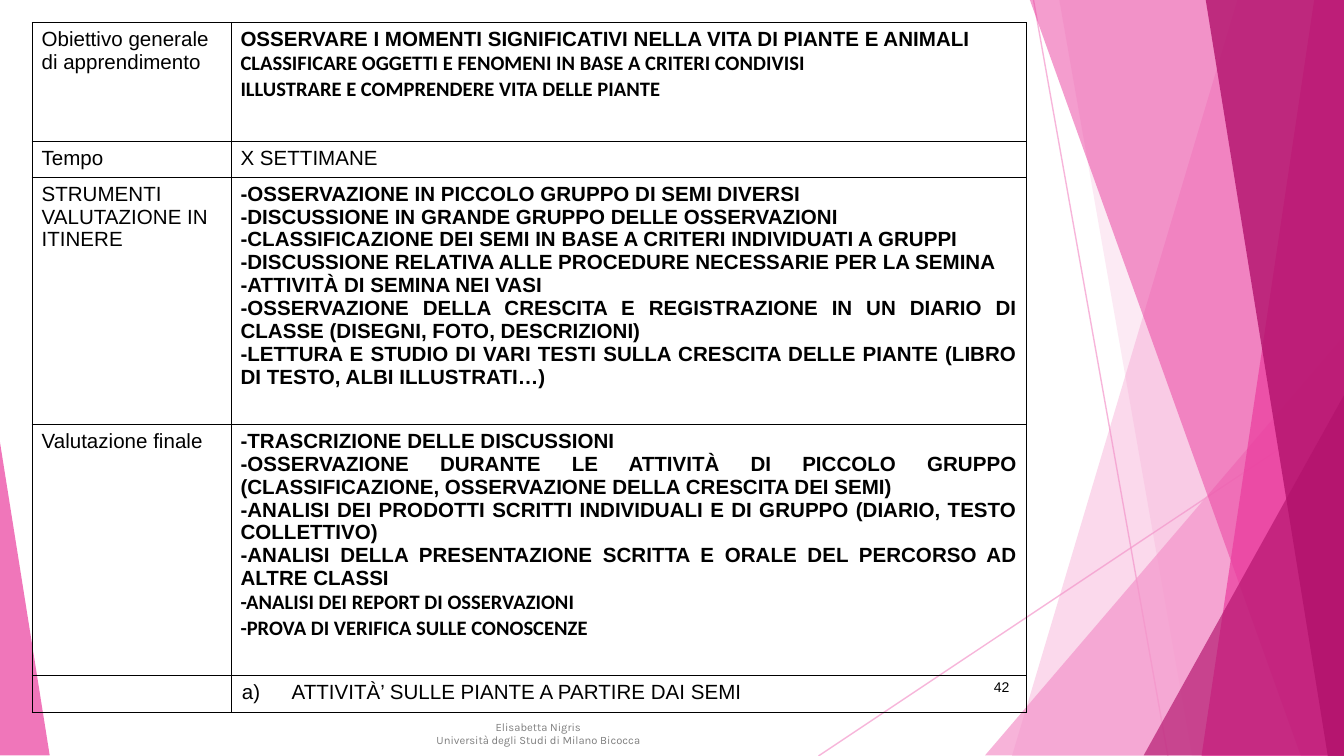
from lxml.etree import SubElement
from pptx import Presentation
from pptx.dml.color import RGBColor as RGB
from pptx.enum.shapes import MSO_CONNECTOR as CONNECTOR, MSO_SHAPE as SHAPE
from pptx.enum.text import MSO_ANCHOR as ANCHOR, PP_ALIGN as ALIGN
from pptx.oxml.ns import qn
from pptx.util import Inches, Pt

THEME = {
    "ink": "000000", "grey": "7F7F7F",
    "light": "F496CB", "pink": "EA3C9E", "deep": "B2126C",
    "arial": "Arial", "calibri": "Calibri", "karla": "Karla",
    "body": 11, "number": 7.5, "credit": 6, "rule": 0.75,
}
WIDTH = 10
HEIGHT = WIDTH * 9 / 16
BLEED = -0.01

RAYS = [((7.69, 0), (8.69, HEIGHT)), ((WIDTH, 3.02), (6.09, HEIGHT))]
FACETS = [
    {"edge": (9.21, 7.53), "tint": "light", "alpha": 36},
    {"edge": (7.88, 8.87), "tint": "light", "alpha": 20},
    {"box": (7.33, 2.5, 2.67, 3.12), "apex": 1, "tint": "light", "alpha": 72},
    {"edge": (7.66, 9.68), "tint": "pink", "alpha": 50},
    {"edge": (9.78, 8.94), "tint": "pink", "alpha": 70},
    {"edge": (8.97, 9.88), "tint": "deep", "alpha": 80},
    {"box": (8.51, 2.94, 1.49, 2.68), "apex": 1, "tint": "deep", "alpha": 66},
    {"box": (0, 3.29, 0.37, 2.33), "apex": 0, "tint": "pink", "alpha": 70},
]

BOLD = {"bold": True, "align": ALIGN.JUSTIFY}
PLAN = [
    (0.88, "Obiettivo generale di apprendimento", [
        ("OSSERVARE I MOMENTI SIGNIFICATIVI NELLA VITA DI PIANTE E ANIMALI", "arial"),
        ("CLASSIFICARE OGGETTI E FENOMENI IN BASE A CRITERI CONDIVISI", "calibri"),
        ("ILLUSTRARE E COMPRENDERE VITA DELLE PIANTE", "calibri"),
    ], BOLD),
    (0.27, "Tempo", [("X SETTIMANE", "arial")], {}),
    (1.84, "STRUMENTI VALUTAZIONE IN ITINERE", [
        ("-OSSERVAZIONE IN PICCOLO GRUPPO DI SEMI DIVERSI", "arial"),
        ("-DISCUSSIONE IN GRANDE GRUPPO DELLE OSSERVAZIONI", "arial"),
        ("-CLASSIFICAZIONE DEI SEMI IN BASE A CRITERI INDIVIDUATI A GRUPPI", "arial"),
        ("-DISCUSSIONE RELATIVA ALLE PROCEDURE NECESSARIE PER LA SEMINA", "arial"),
        ("-ATTIVITÀ DI SEMINA NEI VASI", "arial"),
        ("-OSSERVAZIONE DELLA CRESCITA E REGISTRAZIONE IN UN DIARIO DI CLASSE "
         "(DISEGNI, FOTO, DESCRIZIONI)", "arial"),
        ("-LETTURA E STUDIO DI VARI TESTI SULLA CRESCITA DELLE PIANTE "
         "(LIBRO DI TESTO, ALBI ILLUSTRATI…)", "arial"),
    ], BOLD),
    (1.87, "Valutazione finale", [
        ("-TRASCRIZIONE DELLE DISCUSSIONI", "arial"),
        ("-OSSERVAZIONE DURANTE LE ATTIVITÀ DI PICCOLO GRUPPO "
         "(CLASSIFICAZIONE, OSSERVAZIONE DELLA CRESCITA DEI SEMI)", "arial"),
        ("-ANALISI DEI PRODOTTI SCRITTI INDIVIDUALI E DI GRUPPO "
         "(DIARIO, TESTO COLLETTIVO)", "arial"),
        ("-ANALISI DELLA PRESENTAZIONE SCRITTA E ORALE DEL PERCORSO "
         "AD ALTRE CLASSI", "arial"),
        ("-ANALISI DEI REPORT DI OSSERVAZIONI", "calibri"),
        ("-PROVA DI VERIFICA SULLE CONOSCENZE", "calibri"),
    ], BOLD),
    (0.27, "", [("ATTIVITÀ’ SULLE PIANTE A PARTIRE DAI SEMI", "arial")], {"lettered": True}),
]
COLUMNS = (1.48, 5.92)
PLAN_LEFT, PLAN_TOP = 0.24, 0.17
NUMBER = ("42", (7.05, 4.96, 0.56, 0.3))
CREDIT = (["Elisabetta Nigris", "Università degli Studi di Milano Bicocca"],
          (1.98, 5.31, 4.05, 0.66))


def color(name):
    return RGB.from_string(THEME[name])


def write(frame, lines, size="body", ink="ink", bold=False, align=ALIGN.LEFT,
          lettered=False, anchor=ANCHOR.TOP):
    """Fill a text frame with (text, font) lines in one format."""
    frame.word_wrap = True
    frame.vertical_anchor = anchor
    for index, (text, font) in enumerate(lines):
        line = frame.paragraphs[0] if index == 0 else frame.add_paragraph()
        line.alignment = align
        if lettered:
            props = line._p.get_or_add_pPr()
            props.set("marL", str(Inches(0.38)))
            props.set("indent", str(Inches(-0.37)))
            SubElement(props, qn("a:buAutoNum"), type="alphaLcParenR")
        if text:
            run = line.add_run()
            run.text = text
            run.font.name = THEME[font]
            run.font.size = Pt(THEME[size])
            run.font.bold = bold
            run.font.color.rgb = color(ink)
        else:
            SubElement(line._p, qn("a:endParaRPr"), sz=str(THEME[size] * 100))


def fade(part, alpha):
    for tint in part._element.spPr.iter(qn("a:srgbClr")):
        SubElement(tint, qn("a:alpha"), val=str(alpha * 1000))


def draw_ray(shapes, start, end):
    ray = shapes.add_connector(CONNECTOR.STRAIGHT, *map(Inches, start + end))
    ray.line.color.rgb = color("light")
    ray.line.width = Pt(THEME["rule"])
    fade(ray, 70)
    SubElement(ray._element.spPr, qn("a:effectLst"))


def draw_facet(shapes, tint, alpha, edge=None, box=None, apex=0):
    if edge:
        top, bottom = edge
        outline = shapes.build_freeform(Inches(top), Inches(BLEED))
        corners = [(WIDTH, BLEED), (WIDTH, HEIGHT), (bottom, HEIGHT)]
        outline.add_line_segments([(Inches(x), Inches(y)) for x, y in corners])
        facet = outline.convert_to_shape()
    else:
        facet = shapes.add_shape(SHAPE.ISOSCELES_TRIANGLE, *map(Inches, box))
        facet.adjustments[0] = apex
    facet.shadow.inherit = False
    facet.fill.solid()
    facet.fill.fore_color.rgb = color(tint)
    facet.line.fill.background()
    fade(facet, alpha)


def style_cell(cell):
    cell.margin_left = cell.margin_right = Inches(0.07)
    cell.margin_top = cell.margin_bottom = Inches(0.04)
    props = cell._tc.get_or_add_tcPr()
    for side in ("a:lnL", "a:lnR", "a:lnT", "a:lnB"):
        border = SubElement(props, qn(side), w=str(Pt(THEME["rule"])))
        SubElement(SubElement(border, qn("a:solidFill")), qn("a:srgbClr"), val=THEME["ink"])
    cell.fill.background()


def draw_plan(shapes):
    total = sum(row[0] for row in PLAN)
    plan = shapes.add_table(len(PLAN), len(COLUMNS), Inches(PLAN_LEFT), Inches(PLAN_TOP),
                            Inches(sum(COLUMNS)), Inches(total)).table
    plan.first_row = plan.horz_banding = False
    for column, width in zip(plan.columns, COLUMNS):
        column.width = Inches(width)
    for row, (height, heading, details, style) in zip(plan.rows, PLAN):
        row.height = Inches(height)
        label, content = row.cells
        style_cell(label)
        style_cell(content)
        write(label.text_frame, [(heading, "arial")])
        write(content.text_frame, details, **style)


def main():
    deck = Presentation()
    deck.slide_width, deck.slide_height = Inches(WIDTH), Inches(HEIGHT)
    shapes = deck.slides.add_slide(deck.slide_layouts[6]).shapes
    for start, end in RAYS:
        draw_ray(shapes, start, end)
    for facet in FACETS:
        draw_facet(shapes, **facet)
    draw_plan(shapes)
    number, place = NUMBER
    write(shapes.add_textbox(*map(Inches, place)).text_frame, [(number, "arial")],
          size="number", align=ALIGN.RIGHT, anchor=ANCHOR.MIDDLE)
    credit, place = CREDIT
    write(shapes.add_textbox(*map(Inches, place)).text_frame,
          [(text, "karla") for text in credit],
          size="credit", ink="grey", align=ALIGN.CENTER)
    deck.save("out.pptx")


if __name__ == "__main__":
    main()
